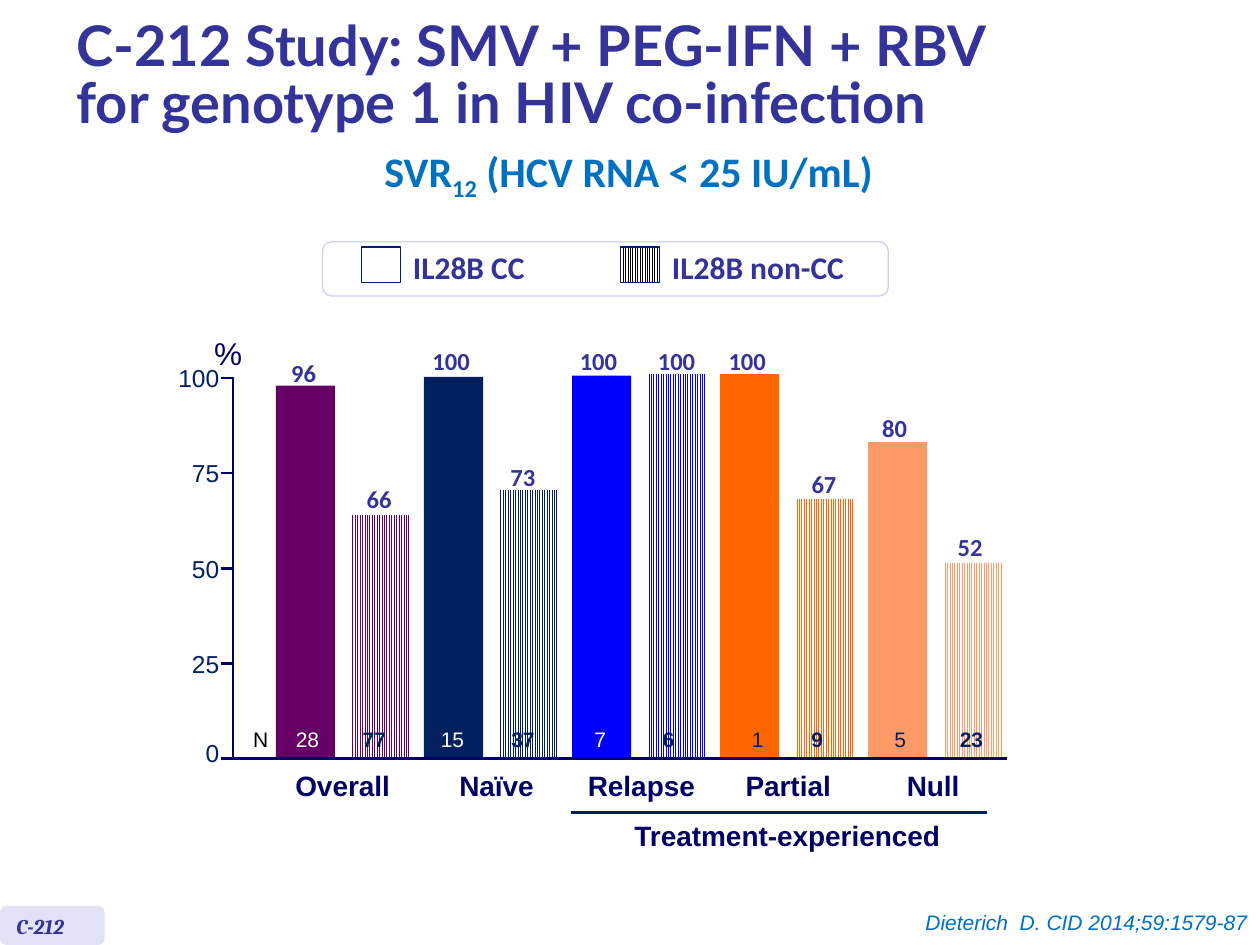
from dataclasses import dataclass

import pptx
import pptx.dml.color
import pptx.enum.dml
import pptx.enum.shapes
import pptx.enum.text
import pptx.oxml.ns
import pptx.util
from lxml import etree

Pt = pptx.util.Pt
RGBColor = pptx.dml.color.RGBColor
ALIGN = pptx.enum.text.PP_ALIGN
SHAPE = pptx.enum.shapes.MSO_SHAPE

WHITE = RGBColor(0xFF, 0xFF, 0xFF)
BLACK = RGBColor(0x00, 0x00, 0x00)
INDIGO = RGBColor(0x33, 0x33, 0x99)
SKY = RGBColor(0x00, 0x70, 0xC0)
NAVY = RGBColor(0x00, 0x20, 0x60)
AXIS = RGBColor(0x00, 0x00, 0x66)
PURPLE = RGBColor(0x66, 0x00, 0x66)
BLUE = RGBColor(0x00, 0x00, 0xFF)
ORANGE = RGBColor(0xFF, 0x66, 0x00)
PEACH = RGBColor(0xFF, 0x99, 0x66)
LILAC = RGBColor(0xD0, 0xD0, 0xF0)
PALE = RGBColor(0xE2, 0xE2, 0xF6)

TITLE = {"name": "Lato", "size": Pt(32), "bold": True}
HEADING = {"name": "Calibri", "size": Pt(24), "bold": True}
LEGEND = {"name": "Calibri", "size": Pt(18), "bold": True}
VALUE = {"name": "Calibri", "size": Pt(14), "bold": True}
TAG = {"name": "Cambria", "size": Pt(12), "bold": True, "italic": True}
CITATION = {"name": "Arial", "size": Pt(12), "italic": True}
UNIT = {"name": "Arial", "size": Pt(18)}
TICK = {"name": "Arial", "size": Pt(14)}
CATEGORY = {"name": "Arial", "size": Pt(16), "bold": True}
COUNT = {"name": "Arial", "size": Pt(12)}

BASELINE, BAR_BOTTOM, BAR_WIDTH = 433.4, 432.7, 33.8
GROUP_PITCH, SOLID_LEFT, STRIPED_LEFT = 84.6, 157.7, 200.2
TICK_TOP, TICK_STEP = 216, 54.35


@dataclass
class Bar:
    top: float
    value: str
    value_center: float
    value_top: float
    count: str
    count_left: float
    count_color: RGBColor


@dataclass
class Group:
    name: str
    center: float
    color: RGBColor
    cc: Bar
    non_cc: Bar


GROUPS = [
    Group("Overall", 195.8, PURPLE,
          Bar(220.3, "96", 173.5, 197.3, "28", 162, WHITE),
          Bar(294.5, "66", 216.7, 269.3, "77", 200.2, NAVY)),
    Group("Naïve", 283.7, NAVY,
          Bar(215.3, "100", 257.8, 190.8, "15", 244.8, WHITE),
          Bar(280.1, "73", 298.8, 257, "37", 285.1, NAVY)),
    Group("Relapse", 366.5, BLUE,
          Bar(214.6, "100", 342, 190.8, "7", 332.6, WHITE),
          Bar(213.8, "100", 386.6, 190.8, "6", 371.5, NAVY)),
    Group("Partial", 450.4, ORANGE,
          Bar(213.8, "100", 427, 190.8, "1", 422.6, NAVY),
          Bar(285.1, "67", 470.9, 260.6, "9", 456.5, NAVY)),
    Group("Null", 533.2, PEACH,
          Bar(252.7, "80", 511.2, 229, "5", 504, NAVY),
          Bar(321.8, "52", 554.4, 296.6, "23", 541.4, NAVY)),
]


def add_text(s, text: str, x: float, y: float, w: float, h: float, style: dict,
             color: RGBColor, align=ALIGN.LEFT, wrap: bool = False,
             inset: tuple = (7.2, 3.6), middle: bool = False):
    """Add a one-paragraph text box and return the paragraph."""
    tf = s.shapes.add_textbox(Pt(x), Pt(y), Pt(w), Pt(h)).text_frame
    across, down = Pt(inset[0]), Pt(inset[1])
    anchor = pptx.enum.text.MSO_ANCHOR
    frame = {"word_wrap": wrap, "margin_left": across, "margin_right": across,
             "margin_top": down, "margin_bottom": down,
             "vertical_anchor": anchor.MIDDLE if middle else anchor.TOP}
    for name, setting in frame.items():
        setattr(tf, name, setting)
    p = tf.paragraphs[0]
    p.text = text
    p.alignment = align
    for r in p.runs:
        format_run(r, style, color)
    return p


def format_run(r, style: dict, color: RGBColor) -> None:
    for name, setting in style.items():
        setattr(r.font, name, setting)
    r.font.color.rgb = color


def add_box(s, x: float, y: float, w: float, h: float, fill: RGBColor | None = None,
            line: RGBColor | None = None, striped: bool = False, kind=SHAPE.RECTANGLE) -> None:
    sp = s.shapes.add_shape(kind, Pt(x), Pt(y), Pt(w), Pt(h))
    sp.shadow.inherit = False
    if fill is None:
        sp.fill.background()
    elif striped:
        sp.fill.patterned()
        sp.fill.pattern = pptx.enum.dml.MSO_PATTERN.LIGHT_VERTICAL
        sp.fill.fore_color.rgb = fill
        sp.fill.back_color.rgb = WHITE
    else:
        sp.fill.solid()
        sp.fill.fore_color.rgb = fill
    if line is None:
        sp.line.fill.background()
    else:
        sp.line.color.rgb = line
        sp.line.width = Pt(0.75)


def add_line(s, x1: float, y1: float, x2: float, y2: float, color: RGBColor = AXIS) -> None:
    sp = s.shapes.add_connector(pptx.enum.shapes.MSO_CONNECTOR.STRAIGHT,
                                Pt(x1), Pt(y1), Pt(x2), Pt(y2))
    sp.line.color.rgb = color
    sp.line.width = Pt(1.5)
    etree.SubElement(sp._element.spPr, pptx.oxml.ns.qn("a:effectLst"))


def add_header(s) -> None:
    p = add_text(s, "C-212 Study: SMV + PEG-IFN + RBV\vfor genotype 1 in HIV co-infection",
                 36.7, 5.8, 657.4, 77, TITLE, INDIGO, wrap=True, middle=True)
    p.line_spacing = 0.85
    p = add_text(s, "SVR", 210.2, 88.6, 298.1, 31.7, HEADING, SKY, ALIGN.CENTER)
    p.line_spacing = Pt(23.6)
    for text, baseline in (("12", "-25000"), (" (HCV RNA < 25 IU/mL)", "0")):
        r = p.add_run()
        r.text = text
        format_run(r, HEADING, SKY)
        r._r.get_or_add_rPr().set("baseline", baseline)


def add_legend(s) -> None:
    add_box(s, 184.3, 138.2, 323.3, 31, WHITE, LILAC, kind=SHAPE.ROUNDED_RECTANGLE)
    for text, x, w, fill in (("IL28B CC", 206.6, 79.2, None),
                             ("IL28B non-CC", 354.6, 113.8, BLACK)):
        add_box(s, x, 141.1, 22.3, 20.2, fill, NAVY, striped=True)
        add_text(s, text, x + 22.3, 138.2, w, 28.8, LEGEND, INDIGO)


def add_bar(s, bar: Bar, x: float, color: RGBColor, striped: bool) -> None:
    add_box(s, x, bar.top, BAR_WIDTH, BAR_BOTTOM - bar.top, color, striped=striped)
    add_text(s, bar.value, bar.value_center - 18, bar.value_top, 36, 31.7,
             VALUE, INDIGO, ALIGN.CENTER, inset=(7.2, 7.2))
    add_text(s, bar.count, bar.count_left, 411.8, 28 if len(bar.count) > 1 else 21, 21.6,
             {**COUNT, "bold": striped}, bar.count_color)


def add_axes(s) -> None:
    for i, label in enumerate(("100", "75", "50", "25", "0")):
        y = TICK_TOP + i * TICK_STEP
        shift = 3 if label == "0" else 0
        add_text(s, label, 101.5, y - 8.5 - shift, 23.8, 17, TICK, NAVY, ALIGN.RIGHT,
                 inset=(0, 0), middle=True)
        add_line(s, 126, y, 575.3 if label == "0" else 133.9, y)
    add_line(s, 133.2, 215.3, 133.2, BASELINE)
    add_text(s, "%", 115.2, 187.2, 30.2, 28.8, UNIT, AXIS)
    add_text(s, "N", 137.5, 411.8, 23, 21.6, COUNT, BLACK)


def add_plot(s) -> None:
    for i, group in enumerate(GROUPS):
        offset = i * GROUP_PITCH
        add_bar(s, group.cc, SOLID_LEFT + offset, group.color, False)
        add_bar(s, group.non_cc, STRIPED_LEFT + offset, group.color, True)
        add_text(s, group.name, group.center - 38, 435.6, 76, 26.6,
                 CATEGORY, AXIS, ALIGN.CENTER)
    add_axes(s)
    add_line(s, 326.2, 464.4, 563.8, 464.4, NAVY)
    add_text(s, "Treatment-experienced", 354.2, 464.4, 191.5, 26.6,
             CATEGORY, AXIS, ALIGN.CENTER)


def add_footer(s) -> None:
    add_box(s, 0, 517.7, 59.8, 22.3, PALE, kind=SHAPE.ROUNDED_RECTANGLE)
    add_text(s, "C-212", 2.2, 518.4, 56.9, 21.6, TAG, INDIGO, wrap=True)
    add_text(s, "Dieterich  D. CID 2014;59:1579-87", 490.3, 516.2, 229.7, 21.6,
             CITATION, SKY, ALIGN.RIGHT, wrap=True)


def main() -> None:
    prs = pptx.Presentation()
    prs.slide_width, prs.slide_height = Pt(720), Pt(540)
    s = prs.slides.add_slide(prs.slide_layouts[6])
    add_header(s)
    add_legend(s)
    add_plot(s)
    add_footer(s)
    prs.save("out.pptx")


if __name__ == "__main__":
    main()
